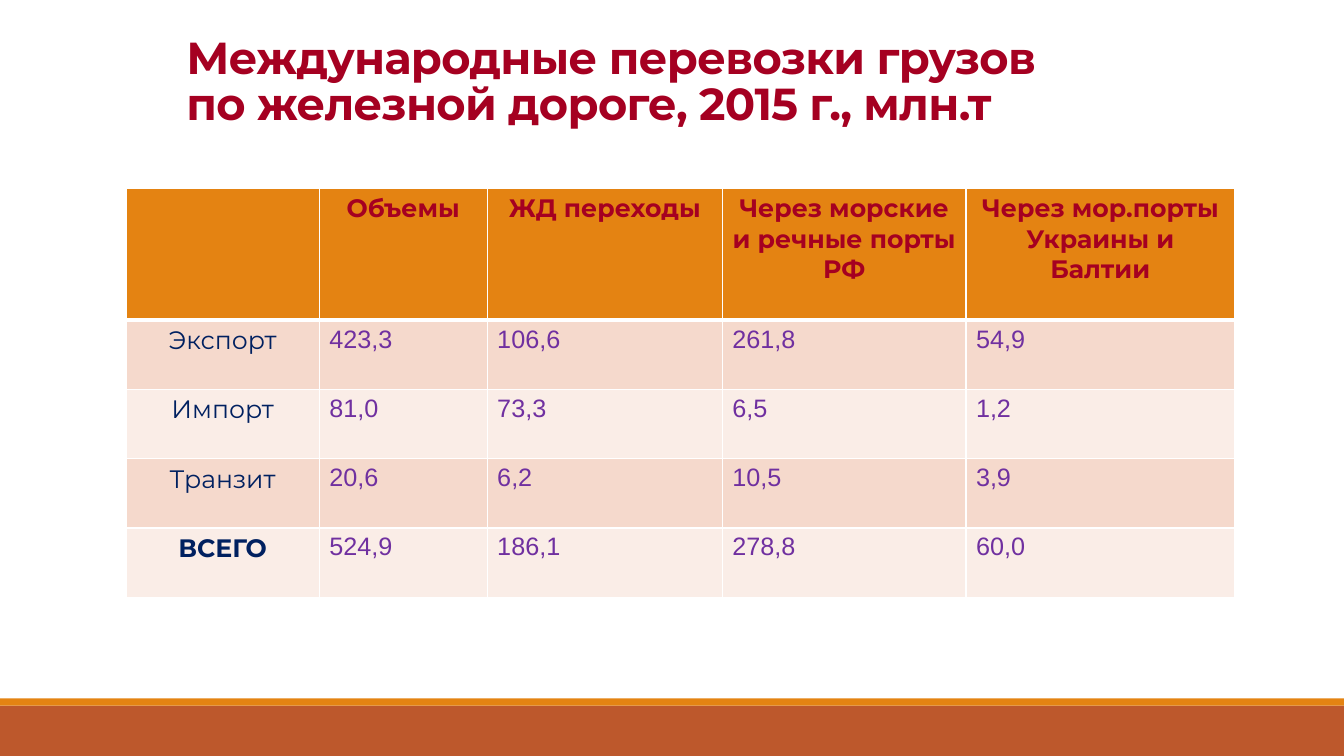
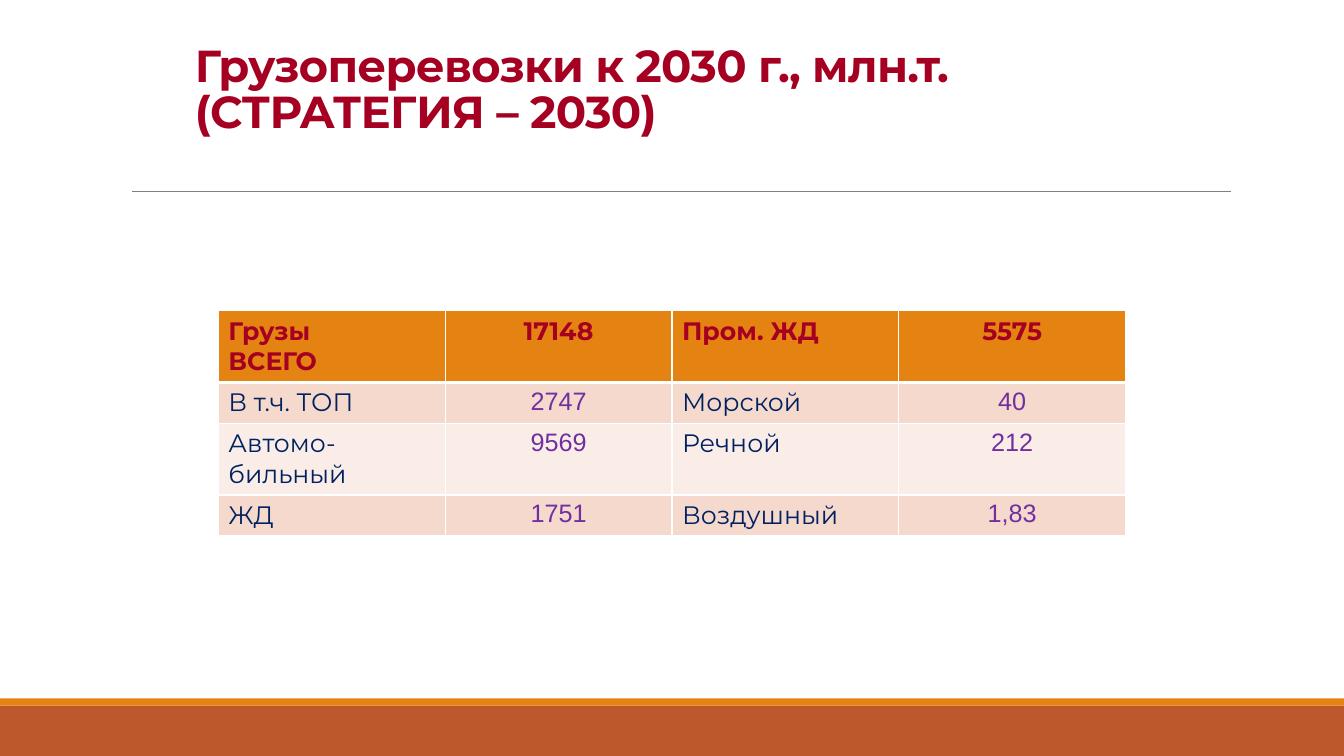
from lxml import etree
from pptx import Presentation
from pptx.dml.color import RGBColor
from pptx.enum.shapes import MSO_CONNECTOR, MSO_SHAPE
from pptx.enum.text import MSO_ANCHOR, MSO_AUTO_SIZE, PP_ALIGN
from pptx.oxml.ns import qn
from pptx.util import Pt

LEFT, CENTER = PP_ALIGN.LEFT, PP_ALIGN.CENTER
RECT, STRAIGHT = MSO_SHAPE.RECTANGLE, MSO_CONNECTOR.STRAIGHT
BOTTOM, NO_FIT = MSO_ANCHOR.BOTTOM, MSO_AUTO_SIZE.NONE

PX = 9525  # EMU per px, 96 px to the inch
WIDTH, HEIGHT = 1280, 720
COLORS = {
    "accent": "E48312", "band": "BD582C", "rule": "808080", "border": "FFFFFF",
    "heading": "A50021", "label": "002060", "number": "7030A0",
    "odd": "F5D9CC", "even": "FAEDE7",
}
HEADING = {"name": "Montserrat", "size": Pt(18), "bold": True, "color": "heading"}
LABEL = {**HEADING, "bold": False, "color": "label"}
TOTAL = {**LABEL, "bold": True}
NUMBER = {**LABEL, "name": "Arial", "color": "number"}
TITLE = {**HEADING, "size": Pt(32)}

BANDS = [("band", 672, 48), ("accent", 665, 7)]
RULE = (126, 182, 1172, 182)

SLIDES = [
    {
        "title": "Международные перевозки грузов\vпо железной дороге, 2015 г., млн.т",
        "title_box": (168, 16, 936, 112),
        "origin": (120, 179),
        "cols": [184, 160, 224, 232, 256],
        "heights": [126, 66, 66, 66, 66],
        "label_cols": {0},
        "aligns": {"heading": [CENTER] * 5, "body": [CENTER] + [LEFT] * 4},
        "rows": [
            ["", "Объемы", "ЖД переходы", "Через морские и речные порты РФ",
             "Через мор.порты Украины и Балтии"],
            ["Экспорт", "423,3", "106,6", "261,8", "54,9"],
            ["Импорт", "81,0", "73,3", "6,5", "1,2"],
            ["Транзит", "20,6", "6,2", "10,5", "3,9"],
            ["ВСЕГО", "524,9", "186,1", "278,8", "60,0"],
        ],
    },
    {
        "title": "Грузоперевозки к 2030 г., млн.т. (СТРАТЕГИЯ – 2030)",
        "title_box": (176, 16, 944, 120),
        "origin": (208, 296),
        "cols": [216] * 4,
        "heights": [67, 39, 68, 38],
        "label_cols": {0, 2},
        "aligns": {"heading": [LEFT, CENTER] * 2, "body": [LEFT, CENTER] * 2},
        "rows": [
            ["Грузы\nВСЕГО", "17148", "Пром. ЖД", "5575"],
            ["В т.ч. ТОП", "2747", "Морской", "40"],
            ["Автомо-бильный", "9569", "Речной", "212"],
            ["ЖД", "1751", "Воздушный", "1,83"],
        ],
    },
]


def px(*values):
    return [v * PX for v in values]


def rgb(name):
    return RGBColor.from_string(COLORS[name])


def fill(part, color):
    part.fill.solid()
    part.fill.fore_color.rgb = rgb(color)


def set_font(font, style):
    for key, value in style.items():
        if key == "color":
            font.color.rgb = rgb(value)
        else:
            setattr(font, key, value)


def set_borders(cell, top, bottom):
    """Draw the four cell edges; top and bottom are widths in points."""
    tcPr = cell._tc.get_or_add_tcPr()
    edges = {"a:lnL": 1, "a:lnR": 1, "a:lnT": top, "a:lnB": bottom}
    for i, (tag, width) in enumerate(edges.items()):
        ln = etree.Element(qn(tag), w=str(Pt(width)))
        paint = etree.SubElement(ln, qn("a:solidFill"))
        etree.SubElement(paint, qn("a:srgbClr"), val=COLORS["border"])
        tcPr.insert(i, ln)


def add_decor(layout, s):
    """Draw the bands and the rule, then hand them over to the layout."""
    decor = []
    for color, top, height in BANDS:
        sp = s.shapes.add_shape(RECT, *px(0, top, WIDTH, height))
        sp.shadow.inherit = False
        fill(sp, color)
        sp.line.fill.background()
        decor.append(sp)
    rule = s.shapes.add_connector(STRAIGHT, *px(*RULE))
    rule.line.color.rgb = rgb("rule")
    rule.line.width = Pt(0.5)
    etree.SubElement(rule._element.spPr, qn("a:effectLst"))
    decor.append(rule)
    for sp in decor:
        layout.shapes._spTree.append(sp._element)


def add_title(s, text, box):
    sp = s.shapes.title
    sp.left, sp.top, sp.width, sp.height = px(*box)
    tf = sp.text_frame
    tf.text = text
    tf.word_wrap, tf.auto_size, tf.vertical_anchor = True, NO_FIT, BOTTOM
    p = tf.paragraphs[0]
    p.alignment, p.line_spacing = LEFT, 0.85
    for r in p.runs:
        set_font(r.font, TITLE)
        r._r.get_or_add_rPr().set("spc", "-50")


def text_style(text, row, is_label):
    if row == 0:
        return HEADING
    if not is_label:
        return NUMBER
    return TOTAL if text == "ВСЕГО" else LABEL


def add_grid(s, data):
    cols, heights, rows = data["cols"], data["heights"], data["rows"]
    frame = s.shapes.add_table(len(rows), len(cols),
                               *px(*data["origin"], sum(cols), sum(heights)))
    table = frame.table
    for part, size in zip([*table.columns, *table.rows], cols + heights):
        if part in list(table.columns):
            part.width = size * PX
    for col, width in zip(table.columns, cols):
        col.width = width * PX
    for row, height in zip(table.rows, heights):
        row.height = height * PX
    for i, row in enumerate(rows):
        aligns = data["aligns"]["body" if i else "heading"]
        color = ("even", "odd")[i % 2] if i else "accent"
        for j, text in enumerate(row):
            cell = table.cell(i, j)
            fill(cell, color)
            set_borders(cell, 3 if i == 1 else 1, 1 if i else 3)
            cell.text = text
            for p in cell.text_frame.paragraphs:
                p.alignment = aligns[j]
                set_font(p.font, text_style(text, i, j in data["label_cols"]))
                for r in p.runs:
                    set_font(r.font, text_style(text, i, j in data["label_cols"]))


def main():
    prs = Presentation()
    prs.slide_width, prs.slide_height = px(WIDTH, HEIGHT)
    layout = prs.slide_layouts[5]
    for n, data in enumerate(SLIDES):
        s = prs.slides.add_slide(layout)
        if n == 0:
            add_decor(layout, s)
        add_title(s, data["title"], data["title_box"])
        add_grid(s, data)
    prs.save("out.pptx")


if __name__ == "__main__":
    main()
